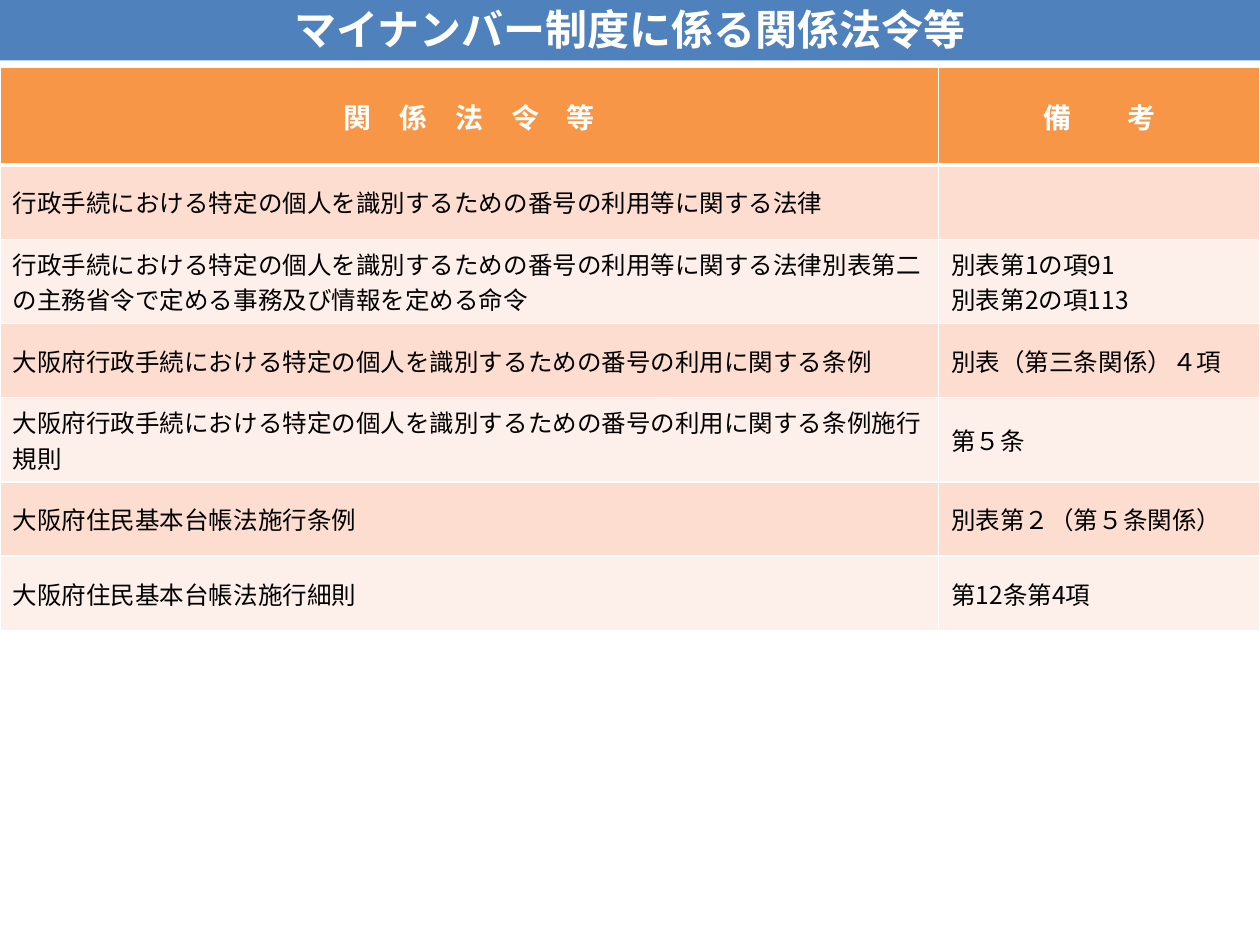
from lxml.etree import SubElement
from pptx import Presentation
from pptx.dml.color import RGBColor
from pptx.enum.shapes import MSO_SHAPE
from pptx.enum.text import MSO_ANCHOR, PP_ALIGN
from pptx.oxml.ns import qn
from pptx.util import Inches, Pt

FONT = "Noto Sans CJK JP"
COLORS = {
    "title": "4F81BD",
    "header": "F79646",
    "odd": "FCDDCF",
    "even": "FDEFE9",
    "white": "FFFFFF",
    "black": "000000",
}
TITLE_FORMAT = {"size": Pt(24), "bold": True, "name": FONT}
HEADER_FORMAT = {"size": Pt(16), "bold": True, "name": FONT}
BODY_FORMAT = {"size": Pt(14), "bold": False, "name": FONT}

TITLE = "マイナンバー制度に係る関係法令等"
ROWS = [
    ("関　係　法　令　等", "備　　考"),
    ("行政手続における特定の個人を識別するための番号の利用等に関する法律", ""),
    (
        "行政手続における特定の個人を識別するための番号の利用等に関する法律別表第二の主務省令で定める事務及び情報を定める命令",
        "別表第1の項91\n別表第2の項113",
    ),
    (
        "大阪府行政手続における特定の個人を識別するための番号の利用に関する条例",
        "別表（第三条関係）４項",
    ),
    (
        "大阪府行政手続における特定の個人を識別するための番号の利用に関する条例施行規則",
        "第５条",
    ),
    ("大阪府住民基本台帳法施行条例", "別表第２（第５条関係）"),
    ("大阪府住民基本台帳法施行細則", "第12条第4項"),
]
COLUMN_SHARES = (0.745, 0.255)
HEADER_HEIGHT = 0.78


def rgb(color):
    """Return the named colour."""
    return RGBColor.from_string(COLORS[color])


def paint(shape, color):
    """Fill a shape or cell with one colour."""
    shape.fill.solid()
    shape.fill.fore_color.rgb = rgb(color)


def write_text(text_frame, text, font_format, color, alignment):
    """Write the text and format every run."""
    text_frame.text = text
    for paragraph in text_frame.paragraphs:
        paragraph.alignment = alignment
        for run in paragraph.runs:
            for attribute, value in font_format.items():
                setattr(run.font, attribute, value)
            run.font.color.rgb = rgb(color)
            SubElement(run.font._element, qn("a:ea"), typeface=FONT)


def set_border(cell, side, width):
    """Add a white border on one side of a cell, before its fill."""
    properties = cell._tc.get_or_add_tcPr()
    line = SubElement(properties, qn(f"a:{side}"), w=str(Pt(width)))
    fill = SubElement(line, qn("a:solidFill"))
    SubElement(fill, qn("a:srgbClr"), val=COLORS["white"])


def add_title_bar(slide, left, top, width, height):
    """Add the title bar in the given box."""
    bar = slide.shapes.add_shape(
        MSO_SHAPE.RECTANGLE, Inches(left), Inches(top), Inches(width), Inches(height)
    )
    bar.shadow.inherit = False
    paint(bar, "title")
    bar.line.fill.background()
    bar.text_frame.vertical_anchor = MSO_ANCHOR.MIDDLE
    write_text(bar.text_frame, TITLE, TITLE_FORMAT, "white", PP_ALIGN.CENTER)


def format_cell(cell, text, row_index):
    """Fill, border and write one cell according to its row."""
    is_header = row_index == 0
    bottom_width = 3 if is_header else 1
    top_width = 3 if row_index == 1 else 1
    for side, width in (("lnL", 1), ("lnR", 1), ("lnT", top_width), ("lnB", bottom_width)):
        set_border(cell, side, width)
    cell.vertical_anchor = MSO_ANCHOR.MIDDLE
    if is_header:
        paint(cell, "header")
        write_text(cell.text_frame, text, HEADER_FORMAT, "white", PP_ALIGN.CENTER)
    else:
        paint(cell, "odd" if row_index % 2 else "even")
        write_text(cell.text_frame, text, BODY_FORMAT, "black", PP_ALIGN.LEFT)


def add_law_table(slide, left, top, width, height):
    """Add the table of laws in the given box."""
    table = slide.shapes.add_table(
        len(ROWS), len(COLUMN_SHARES),
        Inches(left), Inches(top), Inches(width), Inches(height),
    ).table
    for column, share in zip(table.columns, COLUMN_SHARES):
        column.width = Inches(width * share)
    body_height = (height - HEADER_HEIGHT) / (len(ROWS) - 1)
    for row_index, texts in enumerate(ROWS):
        row = table.rows[row_index]
        row.height = Inches(body_height if row_index else HEADER_HEIGHT)
        for cell, text in zip(row.cells, texts):
            format_cell(cell, text, row_index)


def main():
    """Build and save the slide."""
    presentation = Presentation()
    presentation.slide_width = Inches(10)
    presentation.slide_height = Inches(7.5)
    slide = presentation.slides.add_slide(presentation.slide_layouts[6])
    add_title_bar(slide, -0.04, -0.03, 10.08, 0.51)
    add_law_table(slide, 0, 0.53, 10, 4.32)
    presentation.save("out.pptx")


if __name__ == "__main__":
    main()
